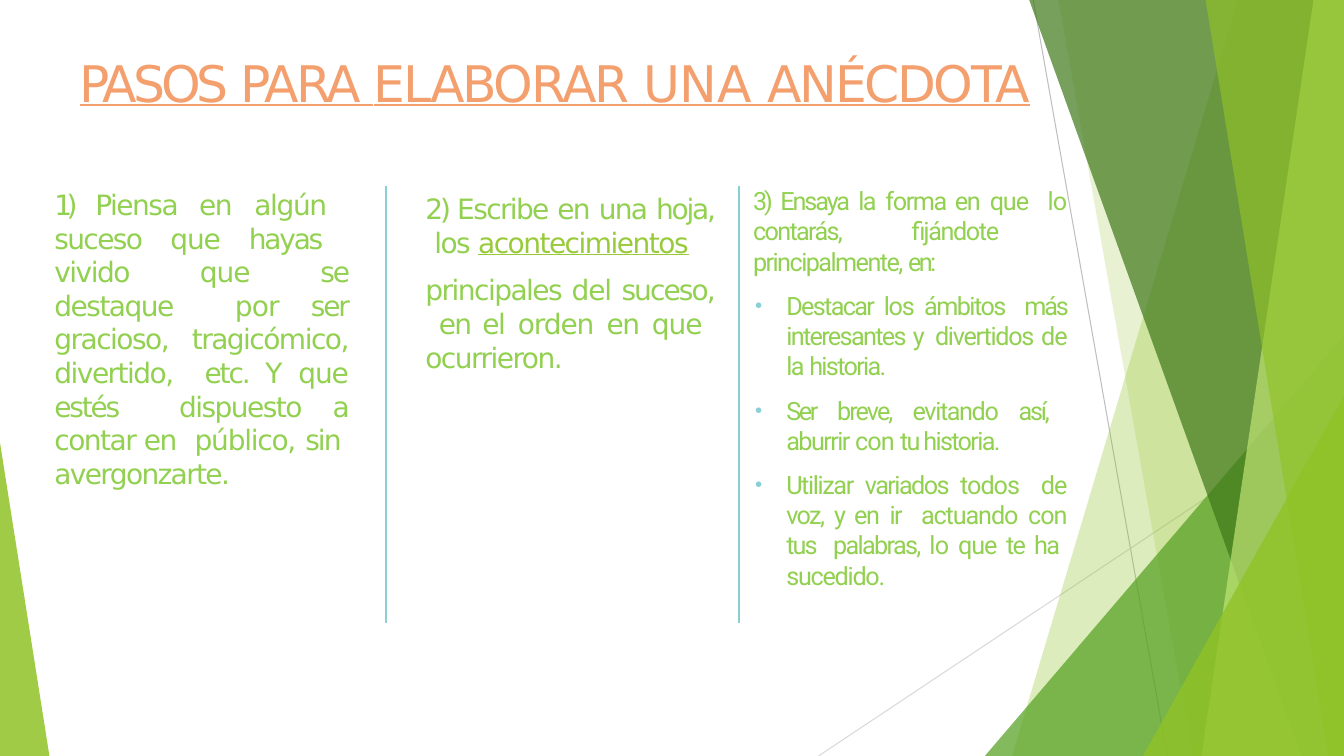
from dataclasses import dataclass
from typing import NamedTuple

from lxml.etree import SubElement
from pptx import Presentation
from pptx.dml.color import RGBColor
from pptx.enum.shapes import MSO_CONNECTOR, MSO_SHAPE
from pptx.enum.text import MSO_ANCHOR, MSO_AUTO_SIZE, PP_ALIGN
from pptx.oxml.ns import qn
from pptx.util import Inches, Pt

WIDTH, HEIGHT = Inches(13.33), Inches(7.5)
ORANGE, GREEN, LINK_GREEN, TEAL = "F4A06E", "92D050", "99CA3C", "89D0D5"


class Box(NamedTuple):
    """Left, top, width and height in percent of the slide."""
    left: float
    top: float
    width: float
    height: float


class Band(NamedTuple):
    """Panel that reaches the right edge, with a slanted left side."""
    top_x: float
    bottom_x: float
    color: str
    opacity: int


class Corner(NamedTuple):
    """Right-angled triangle; apex is 0 for left and 1 for right."""
    box: Box
    apex: int
    color: str
    opacity: int


class Line(NamedTuple):
    start: tuple[float, float]
    end: tuple[float, float]
    color: str
    weight: float


class Piece(NamedTuple):
    """Words that share one letter spacing, in points."""
    words: str
    spacing: float
    linked: bool = False


@dataclass
class Block:
    pieces: list[Piece]
    space_before: float
    bullet: bool = False


@dataclass
class Style:
    font: str
    size: int
    color: str
    alignment: PP_ALIGN = PP_ALIGN.JUSTIFY
    underline: bool = False


BACKDROP = [
    Line((76.88, 0), (86.85, 100), "BFBFBF", 0.75),
    Line((100, 53.73), (60.9, 100), "D9D9D9", 0.75),
    Band(92.1, 75.3, "90C226", 30),
    Band(78.75, 88.73, "90C226", 20),
    Corner(Box(73.28, 44.4, 26.72, 55.6), 1, "54A021", 72),
    Band(76.58, 96.83, "3F7819", 70),
    Band(97.73, 89.4, "C0E474", 70),
    Band(89.7, 98.85, "90C226", 65),
    Corner(Box(85.05, 52.4, 14.95, 47.6), 1, "90C226", 80),
    Corner(Box(0, 58.53, 3.68, 41.47), 0, "90C226", 85),
]
DIVIDERS = [Line((x, 24.67), (x, 82.4), TEAL, 0.96) for x in (28.73, 54.98)]

TITLE_BOX = Box(5.93, 6.8, 71.78, 8.4)
FIRST_BOX = Box(4.05, 24.67, 21.83, 40.4)
SECOND_BOX = Box(31.65, 25.2, 21.45, 24.53)
THIRD_BOX = Box(56.03, 24.4, 23.33, 54.27)

TITLE_STYLE = Style("DejaVu Sans", 36, ORANGE, PP_ALIGN.LEFT, True)
STEP_STYLE = Style("DejaVu Sans", 20, GREEN)
TIPS_STYLE = Style("Roboto", 18, GREEN)

TITLE = [Block([
    Piece("PASOS ", -2.9), Piece("PARA ", -2.2), Piece("ELABORAR ", -1.6),
    Piece("UNA", -0.2), Piece(" ", -2.8), Piece("ANÉCDOTA", -1.7)], 1)]
FIRST_STEP = [Block([
    Piece("1) ", -4), Piece("Piensa en ", -1.1), Piece("algún  ", -1),
    Piece("suceso ", -1.2), Piece("que ", -0.8), Piece("hayas  ", -1.6),
    Piece("vivido ", -1.1), Piece("que ", -0.8), Piece("se ", -1.6),
    Piece("destaque  ", -1.1), Piece("por ", -0.6), Piece("ser ", -1.5),
    Piece("gracioso,  tragicómico, divertido,  ", -1.1), Piece("etc. ", -1.5),
    Piece("Y ", -0.7), Piece("que ", -0.8), Piece("estés  ", -1.6),
    Piece("dispuesto ", -1.1), Piece("a ", -1.4), Piece("contar en  ", -1.1),
    Piece("público, ", -0.9), Piece("sin  ", -1.4), Piece("avergonzarte.", -1.2)], 1.1)]
SECOND_STEP = [
    Block([
        Piece("2) ", -2.3), Piece("Escribe ", -1.2), Piece("en ", -1.1),
        Piece("una ", -1.2), Piece("hoja,  ", -1.6), Piece("los ", -1.1),
        Piece("acontecimientos", -1.1, linked=True)], 1.1),
    Block([
        Piece("principales ", -1.1), Piece("del ", -0.8), Piece("suceso,  ", -1.4),
        Piece("en el ", -1.1), Piece("orden ", -0.8), Piece("en ", -1.1),
        Piece("que  ", -0.8), Piece("ocurrieron.", -1.1)], 10.1),
]
THIRD_STEP = [
    Block([
        Piece("3) ", -2.1), Piece("Ensaya ", -1.5), Piece("la ", -1.1),
        Piece("forma en ", -1), Piece("que  ", -0.8), Piece("lo ", -0.5),
        Piece("contarás, ", -1.2), Piece("fijándote  ", -1),
        Piece("principalmente, ", -1.1), Piece("en:", -1.9)], 1),
    Block([
        Piece("Destacar ", -1.2), Piece("los ", -0.9), Piece("ámbitos  ", -1.1),
        Piece("más ", -1.6), Piece("interesantes ", -1.2), Piece("y  ", -1.9),
        Piece("divertidos ", -0.9), Piece("de ", -0.7), Piece("la ", -1.1),
        Piece("historia.", -1.2)], 9.9, bullet=True),
    Block([
        Piece("Ser ", -1.7), Piece("breve, ", -1.4), Piece("evitando ", -1),
        Piece("así,  ", -1.6), Piece("aburrir ", -1.1), Piece("con ", -0.7),
        Piece("tu historia.", -1.2)], 10.1, bullet=True),
    Block([
        Piece("Utilizar ", -1), Piece("variados ", -1.1), Piece("todos  de ", -0.7),
        Piece("voz, ", -1.2), Piece("y ", -1.9), Piece("en ", -0.9),
        Piece("ir  ", -1.1), Piece("actuando ", -0.8), Piece("con ", -0.7),
        Piece("tus  ", -1.4), Piece("palabras, ", -1.2), Piece("lo ", -0.5),
        Piece("que ", -0.8), Piece("te ", -1.2), Piece("ha  ", -1.1),
        Piece("sucedido.", -0.9)], 9.9, bullet=True),
]


def rgb(color: str) -> RGBColor:
    return RGBColor.from_string(color)


def across(percent: float) -> int:
    return round(WIDTH * percent / 100)


def down(percent: float) -> int:
    return round(HEIGHT * percent / 100)


def place(box: Box) -> tuple[int, int, int, int]:
    return across(box.left), down(box.top), across(box.width), down(box.height)


def paint(shape, color: str, opacity: int) -> None:
    shape.shadow.inherit = False
    shape.line.fill.background()
    shape.fill.solid()
    shape.fill.fore_color.rgb = rgb(color)
    color_element = shape.fill._xPr.find(qn("a:solidFill"))[0]
    SubElement(color_element, qn("a:alpha"), val=str(opacity * 1000))


def draw(shapes, part: Line | Band | Corner) -> None:
    if isinstance(part, Line):
        (x1, y1), (x2, y2) = part.start, part.end
        connector = shapes.add_connector(
            MSO_CONNECTOR.STRAIGHT, across(x1), down(y1), across(x2), down(y2))
        connector.line.color.rgb = rgb(part.color)
        connector.line.width = Pt(part.weight)
        SubElement(connector._element.spPr, qn("a:effectLst"))
    elif isinstance(part, Band):
        builder = shapes.build_freeform(across(part.top_x), 0)
        builder.add_line_segments(
            [(WIDTH, 0), (WIDTH, HEIGHT), (across(part.bottom_x), HEIGHT)])
        paint(builder.convert_to_shape(), part.color, part.opacity)
    else:
        triangle = shapes.add_shape(MSO_SHAPE.ISOSCELES_TRIANGLE, *place(part.box))
        triangle.adjustments[0] = part.apex
        paint(triangle, part.color, part.opacity)


def set_bullet(paragraph, bullet: bool) -> None:
    properties = paragraph._p.get_or_add_pPr()
    properties.set("marL", str(Inches(0.33) if bullet else 0))
    properties.set("indent", str(Inches(-0.31) if bullet else 0))
    if not bullet:
        SubElement(properties, qn("a:buNone"))
        return
    SubElement(SubElement(properties, qn("a:buClr")), qn("a:srgbClr"), val=TEAL)
    SubElement(properties, qn("a:buSzPct"), val="81000")
    SubElement(properties, qn("a:buChar"), char="•")


def write(shape, box: Box, blocks: list[Block], style: Style) -> None:
    shape.left, shape.top, shape.width, shape.height = place(box)
    frame = shape.text_frame
    frame.word_wrap = True
    frame.auto_size = MSO_AUTO_SIZE.NONE
    frame.vertical_anchor = MSO_ANCHOR.TOP
    frame.margin_left = frame.margin_right = frame.margin_bottom = 0
    frame.margin_top = Inches(0.01)
    for index, block in enumerate(blocks):
        paragraph = frame.add_paragraph() if index else frame.paragraphs[0]
        paragraph.alignment = style.alignment
        paragraph.space_before = Pt(block.space_before)
        set_bullet(paragraph, block.bullet)
        for piece in block.pieces:
            run = paragraph.add_run()
            run.text = piece.words
            run.font.name, run.font.size = style.font, Pt(style.size)
            run.font.color.rgb = rgb(LINK_GREEN if piece.linked else style.color)
            run.font.underline = style.underline or piece.linked
            run._r.get_or_add_rPr().set("spc", str(round(piece.spacing * 100)))


def main() -> None:
    presentation = Presentation()
    presentation.slide_width, presentation.slide_height = WIDTH, HEIGHT
    slide = presentation.slides.add_slide(presentation.slide_layouts[1])
    shapes = slide.shapes
    title, body = shapes.title, slide.placeholders[1]

    # Backdrop and column dividers
    for part in BACKDROP + DIVIDERS:
        draw(shapes, part)

    # Title and third column, brought in front of the backdrop
    for placeholder in (title, body):
        shapes._spTree.append(placeholder._element)
    write(title, TITLE_BOX, TITLE, TITLE_STYLE)
    write(body, THIRD_BOX, THIRD_STEP, TIPS_STYLE)

    # First and second columns
    for box, blocks in ((FIRST_BOX, FIRST_STEP), (SECOND_BOX, SECOND_STEP)):
        write(shapes.add_textbox(*place(box)), box, blocks, STEP_STYLE)

    presentation.save("out.pptx")


if __name__ == "__main__":
    main()
